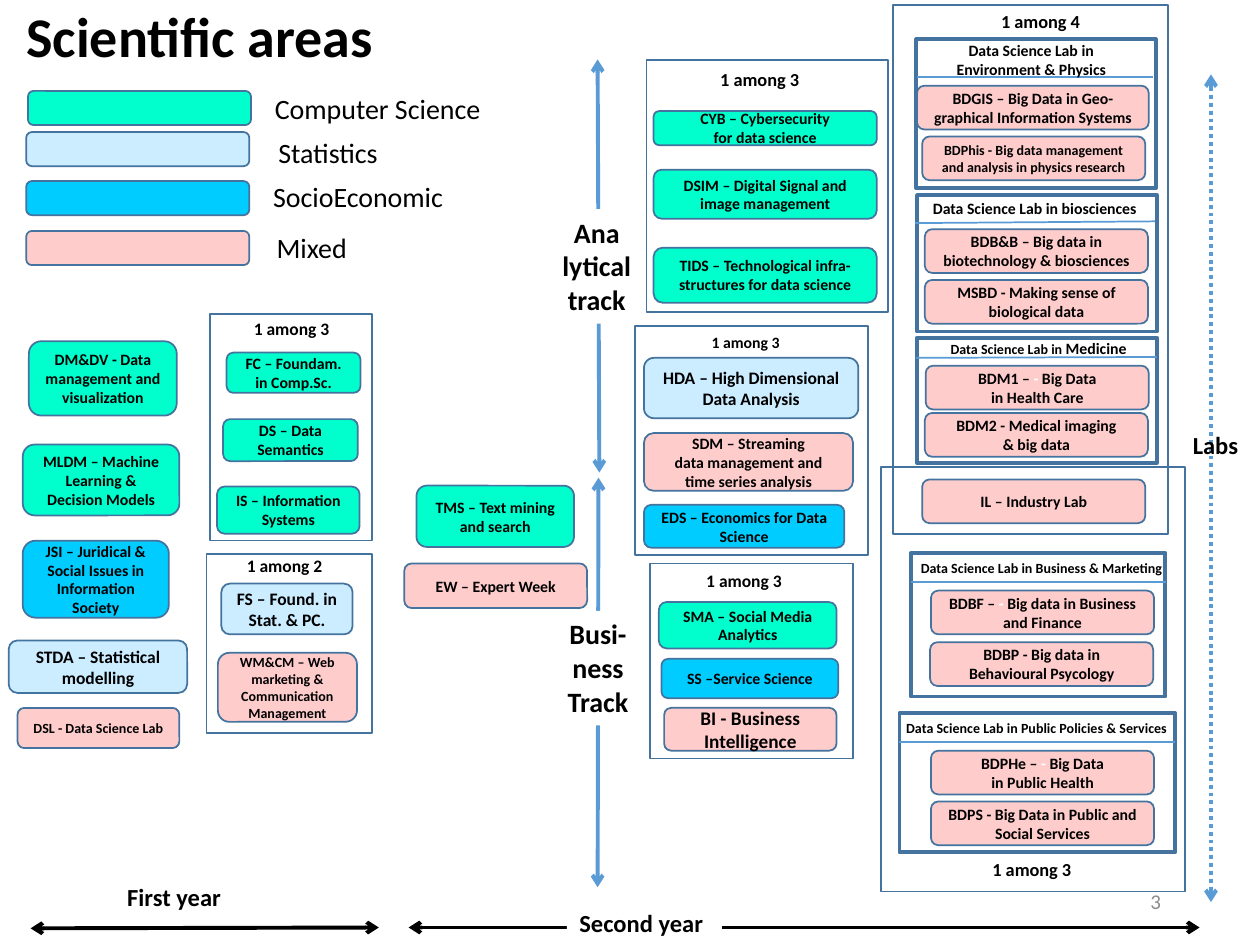
from lxml import etree
from pptx import Presentation
from pptx import util as u
from pptx.dml.color import RGBColor
from pptx.enum import dml, shapes, text
from pptx.oxml.ns import qn

Pt = u.Pt
COLORS = {"cs": "00FFCC", "stat": "CCECFF", "socio": "00CCFF", "mixed": "FFCCCC",
          "edge": "43739E", "arrow": "5B9BD5", "black": "000000", "white": "FFFFFF",
          "grey": "8C8C8C"}
LEFT, CENTER, RIGHT = text.PP_ALIGN.LEFT, text.PP_ALIGN.CENTER, text.PP_ALIGN.RIGHT
MIDDLE = text.MSO_ANCHOR.MIDDLE

prs = Presentation()
prs.slide_width, prs.slide_height = Pt(720), Pt(540)
s = prs.slides.add_slide(prs.slide_layouts[6])


def add_box(kind, x, y, w, h, fill=None, line=None):
    """Add a preset shape; without fill or line colour that part is left out."""
    sp = s.shapes.add_shape(kind, Pt(x), Pt(y), Pt(w), Pt(h))
    sp.shadow.inherit = False
    if fill:
        sp.fill.solid()
        sp.fill.fore_color.rgb = RGBColor.from_string(COLORS[fill])
    else:
        sp.fill.background()
    if line:
        sp.line.color.rgb = RGBColor.from_string(COLORS["edge"])
        sp.line.width = Pt(line)
    else:
        sp.line.fill.background()
    return sp


def write(sp, words, size, align=CENTER, bold=True, color="black", wrap=True,
          alt_color="white", alt_size=None):
    """Newlines split paragraphs; every second part between bars takes the alt style."""
    tf = sp.text_frame
    tf.word_wrap = wrap
    tf.auto_size = text.MSO_AUTO_SIZE.NONE if wrap else text.MSO_AUTO_SIZE.SHAPE_TO_FIT_TEXT
    tf.vertical_anchor = MIDDLE if wrap else text.MSO_ANCHOR.TOP
    for i, row in enumerate(words.split("\n")):
        p = tf.add_paragraph() if i else tf.paragraphs[0]
        p.alignment = align
        for j, part in enumerate(row.split("|")):
            r = p.add_run()
            r.text = part
            r.font.name = "Calibri"
            r.font.bold = bold
            r.font.size = Pt(alt_size if j % 2 and alt_size else size)
            r.font.color.rgb = RGBColor.from_string(COLORS[alt_color if j % 2 else color])


# Frames: x, y, width, height, line width
frames = [
    (369.5, 34.5, 138, 144, 1), (363, 186.5, 133, 130.5, 1), (371.5, 322, 116, 111.5, 1),
    (120, 179.5, 92.5, 129.5, 1), (118, 316.5, 94.5, 102.5, 1),
    (510.5, 3, 157, 302, 1), (503.5, 267, 173.5, 242.5, 1),
    (523.5, 22.5, 137, 85, 2.25), (524, 111.5, 137, 78, 2.25), (524, 193, 137, 71.5, 2.25),
    (520.5, 316, 145.5, 82, 2.25), (514, 407.5, 157.5, 79.5, 2.25),
]
for x, y, w, h, width in frames:
    add_box(shapes.MSO_SHAPE.RECTANGLE, x, y, w, h, line=width)

# Lines: x1, y1, x2, y2, colour, width, two-headed, dotted
lines = [
    (17.5, 530.5, 216.5, 530, "black", 2.25, True, False),
    (233.5, 530, 685.5, 530, "black", 2.25, True, False),
    (341.5, 34, 342.5, 270, "arrow", 2.25, True, False),
    (342, 273, 341.5, 507, "arrow", 2.25, True, False),
    (692, 42.5, 692, 515.5, "arrow", 2.25, True, True),
    (524, 44, 659, 44, "arrow", 1, False, False),
    (523, 127.5, 660, 126.5, "arrow", 1, False, False),
    (523.5, 204.5, 661, 204, "arrow", 1, False, False),
    (520.5, 332.5, 666, 332.5, "arrow", 1.5, False, False),
    (514, 424, 671.5, 424, "arrow", 1.5, False, False),
]
for x1, y1, x2, y2, color, width, heads, dotted in lines:
    c = s.shapes.add_connector(shapes.MSO_CONNECTOR.STRAIGHT, Pt(x1), Pt(y1), Pt(x2), Pt(y2))
    c.line.color.rgb = RGBColor.from_string(COLORS[color])
    c.line.width = Pt(width)
    if dotted:
        c.line.dash_style = dml.MSO_LINE.ROUND_DOT
    if heads:
        for end in ("a:headEnd", "a:tailEnd"):
            etree.SubElement(c.line._get_or_add_ln(), qn(end), type="arrow")
    etree.SubElement(c._element.spPr, qn("a:effectLst"))

# Courses: area, x, y, width, height, text size, words
courses = [
    ("cs", 16.5, 195, 84.5, 42.5, 9, "DM&DV - Data management and visualization"),
    ("cs", 13, 254, 89.5, 40.5, 9, "MLDM – Machine Learning & Decision Models"),
    ("socio", 13, 309, 83.5, 44, 9, "JSI – Juridical & Social Issues in Information Society"),
    ("stat", 5, 366, 102, 30, 10, "STDA – Statistical modelling"),
    ("mixed", 10, 404.5, 92.5, 23, 8, "DSL - Data Science Lab"),
    ("cs", 129.5, 201.5, 76.5, 23, 9, "FC – Foundam. in Comp.Sc."),
    ("cs", 127.5, 239.5, 77, 24, 9, "DS – Data Semantics"),
    ("cs", 124, 278, 81.5, 27, 9, "IS – Information Systems"),
    ("stat", 126.5, 333.5, 75, 29, 10, "FS – Found. in Stat. & PC."),
    ("mixed", 124.5, 373, 79.5, 39.5, 8, "WM&CM – Web marketing & Communication Management"),
    ("cs", 238, 277.5, 90, 35, 9, "TMS – Text mining\nand search"),
    ("mixed", 231, 322, 104.5, 25.5, 9, "EW – Expert Week"),
    ("cs", 373.5, 63.5, 127.5, 19.5, 9, "CYB – Cybersecurity\nfor data science"),
    ("cs", 373.5, 97, 127.5, 28, 9, "DSIM – Digital Signal and image management"),
    ("cs", 373.5, 141.5, 127.5, 31.5, 9,
     "TIDS – Technological infra-structures for data science"),
    ("stat", 368, 204.5, 122.5, 34.5, 10, "HDA – High Dimensional Data Analysis"),
    ("mixed", 368, 247.5, 119.5, 33, 9,
     "SDM – Streaming\ndata management and\ntime series analysis"),
    ("socio", 368, 288.5, 114.5, 24.5, 9, "EDS – Economics for Data Science"),
    ("cs", 376.5, 344, 101.5, 26.5, 9, "SMA – Social Media Analytics"),
    ("socio", 378, 376.5, 101, 22.5, 9, "SS –Service Science"),
    ("mixed", 379.5, 404.5, 98.5, 24.5, 11, "BI - Business Intelligence"),
    ("mixed", 524, 49, 132.5, 25, 9, "BDGIS – Big Data in Geo-graphical Information Systems"),
]
# Lab courses share one size: x, y, text size, words
labs = [
    (527, 78, 8, "BDPhis - Big data management and analysis in physics research"),
    (528.5, 131, 9, "BDB&B – Big data in biotechnology & biosciences"),
    (528.5, 160, 9, "MSBD - Making sense of biological data"),
    (529, 209, 9, "BDM1 – |- |Big Data\nin Health Care"),
    (528.5, 236, 9, "BDM2 - Medical imaging\n& big data"),
    (527, 274, 9, "IL – Industry Lab"),
    (532, 337.5, 9, "BDBF – |- |Big data in Business\nand Finance"),
    (531.5, 367, 9, "BDBP - Big data in Behavioural Psycology"),
    (532, 429, 9, "BDPHe – |- |Big Data\nin Public Health"),
    (532, 458, 9, "BDPS - Big Data in Public and Social Services"),
]
courses += [("mixed", x, y, 127.5, 25, size, words) for x, y, size, words in labs]
for area, x, y, w, h, size, words in courses:
    sp = add_box(shapes.MSO_SHAPE.ROUNDED_RECTANGLE, x, y, w, h, area, 1)
    write(sp, words, size)

# Legend: area, key x, key y, name x, name y, name width, name
legend = [
    ("cs", 16, 52, 150, 49, 133, "Computer Science"),
    ("stat", 15, 75.5, 152, 74, 72, "Statistics"),
    ("socio", 15, 103.5, 149, 99, 113, "SocioEconomic"),
    ("mixed", 15, 132, 151, 128, 55, "Mixed"),
]
for area, x, y, name_x, name_y, w, name in legend:
    add_box(shapes.MSO_SHAPE.ROUNDED_RECTANGLE, x, y, 127.5, 19.5, area, 1)
    sp = s.shapes.add_textbox(Pt(name_x), Pt(name_y), Pt(w), Pt(26.5))
    write(sp, name, 16, LEFT, bold=False, wrap=False)

# Labels: x, y, width, height, text size, alignment, words
labels = [
    (404.5, 35.5, 60.5, 20, 10.5, LEFT, "1 among 3"),
    (399.5, 186.5, 54, 18, 9, LEFT, "1 among 3"),
    (396.5, 322, 58.5, 20, 10, LEFT, "1 among 3"),
    (138, 178, 57.5, 20, 10, LEFT, "1 among 3"),
    (134, 313.5, 58.5, 20, 10, LEFT, "1 among 2"),
    (565, 2, 60.5, 20, 10.5, LEFT, "1 among 4"),
    (560, 487, 65.5, 20, 10.5, LEFT, "1 among 3"),
    (674.5, 242, 40.5, 24.5, 14, LEFT, "Labs"),
    (538.5, 19.5, 101.5, 29, 9, CENTER, "Data Science Lab in\nEnvironment & Physics"),
    (525, 110, 132.5, 18, 9, CENTER, "Data Science Lab in biosciences"),
    (535.5, 190, 116, 18, 8, CENTER, "Data Science Lab in |Medicine"),
    (518.5, 316, 153.5, 17, 8, CENTER, "Data Science Lab in Business & Marketing"),
    (510.5, 407.5, 164, 17, 8, CENTER, "Data Science Lab in Public Policies & Services"),
]
for x, y, w, h, size, align, words in labels:
    sp = s.shapes.add_textbox(Pt(x), Pt(y), Pt(w), Pt(h))
    write(sp, words, size, align, wrap=False, alt_color="black", alt_size=9)

# Axis names cover the arrows behind them
axes = [
    (65.5, 500.5, 68.5, 24.5, 14, LEFT, "First year"),
    (324, 515.5, 88.5, 24.5, 14, LEFT, "Second year"),
    (314, 119.5, 54, 65.5, 16, CENTER, "Ana\nlytical\ntrack"),
    (317, 349, 49.5, 65.5, 16, CENTER, "Busi-\nness\nTrack"),
]
for x, y, w, h, size, align, words in axes:
    sp = add_box(shapes.MSO_SHAPE.RECTANGLE, x, y, w, h, "white")
    write(sp, words, size, align, wrap=False)

title = s.shapes.add_textbox(Pt(8), Pt(6), Pt(250.5), Pt(33))
write(title, "Scientific areas", 32, LEFT)
title.text_frame.paragraphs[0].line_spacing = 0.9

number = s.shapes.add_textbox(Pt(508.5), Pt(500.5), Pt(162), Pt(29))
write(number, "3", 12, RIGHT, bold=False, color="grey")

prs.save("out.pptx")
